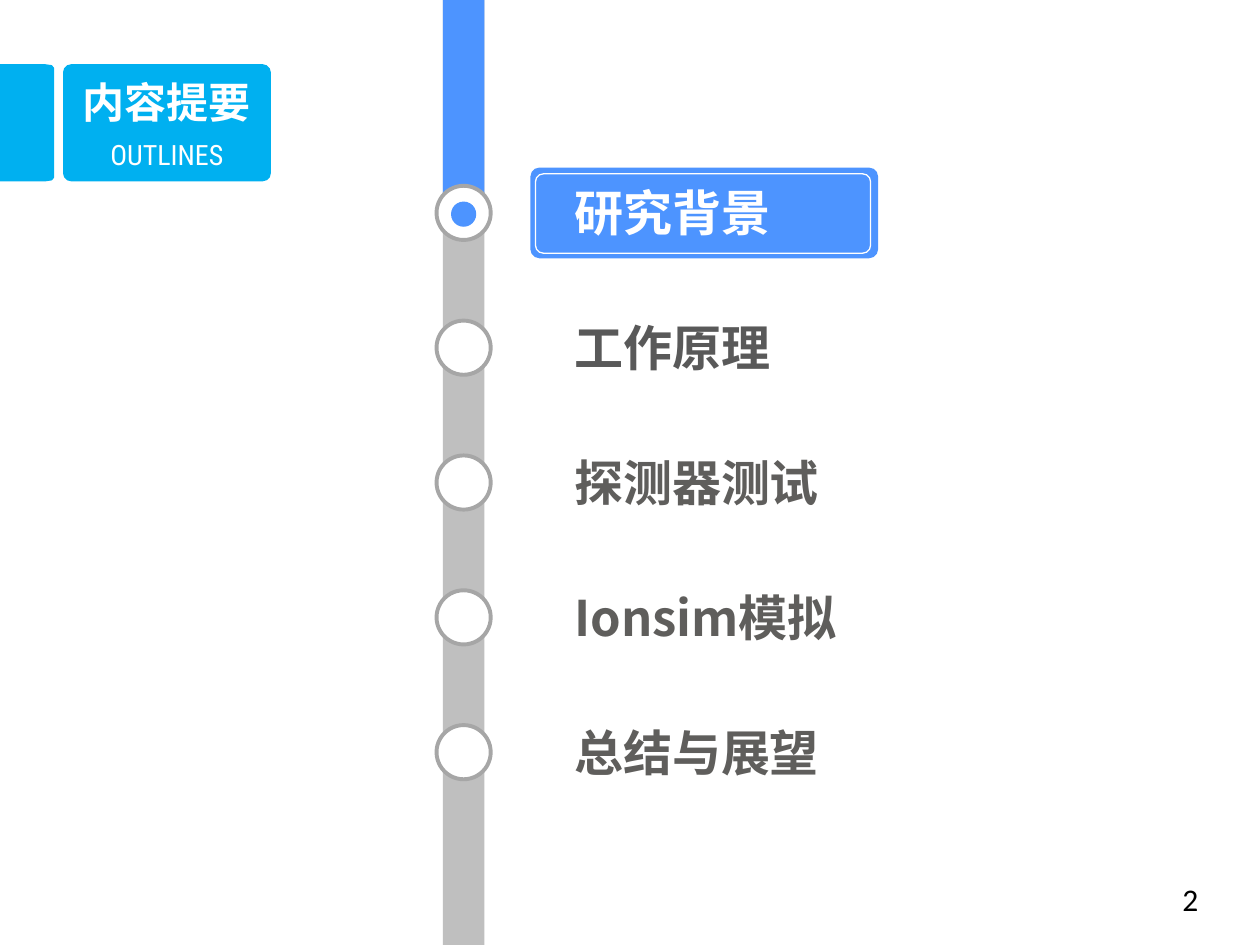
from pptx import Presentation
from pptx.dml.color import RGBColor
from pptx.enum.shapes import MSO_SHAPE
from pptx.enum.text import MSO_ANCHOR, MSO_AUTO_SIZE, PP_ALIGN
from pptx.oxml.ns import qn
from pptx.util import Inches, Pt
from lxml import etree

TITLE, SUBTITLE, PAGE_NUMBER = "内容提要", "OUTLINES", "2"
JP, SC = "Noto Sans CJK JP", "Noto Sans CJK SC"
WHITE = RGBColor(0xFF, 0xFF, 0xFF)
BLACK = RGBColor(0, 0, 0)
CYAN = RGBColor(0x00, 0xB0, 0xF0)
BLUE = RGBColor(0x4D, 0x94, 0xFF)
TRACK_GREY = RGBColor(0xBF, 0xBF, 0xBF)
RING_GREY = RGBColor(0xA6, 0xA6, 0xA6)
DARK = RGBColor(0x59, 0x59, 0x59)
WARM = RGBColor(0x5F, 0x5E, 0x5C)
TOPICS = [
    ("研究背景", JP, WHITE),
    ("工作原理", JP, DARK),
    ("探测器测试", SC, WARM),
    ("Ionsim模拟", SC, WARM),
    ("总结与展望", SC, WARM),
]
RECTANGLE, ROUNDED, OVAL = MSO_SHAPE.RECTANGLE, MSO_SHAPE.ROUNDED_RECTANGLE, MSO_SHAPE.OVAL
LEFT, CENTER, RIGHT = PP_ALIGN.LEFT, PP_ALIGN.CENTER, PP_ALIGN.RIGHT
MIDDLE, FIXED = MSO_ANCHOR.MIDDLE, MSO_AUTO_SIZE.NONE

WIDTH, HEIGHT = 10, 7.5
TRACK_CENTER, TRACK_WIDTH = 3.68, 0.33
FIRST_ROW, ROW_STEP = 1.69, 1.07
RING, DOT = 0.43, 0.2
TAB_TOP, TAB_WIDTH, TAB_HEIGHT = 0.51, 0.43, 0.93
CORNER_X, CORNER_Y = 0.07, 0.03
TITLE_LEFT, TITLE_WIDTH = 0.5, 1.65

deck = Presentation()
deck.slide_width, deck.slide_height = Inches(WIDTH), Inches(HEIGHT)
page = deck.slides.add_slide(deck.slide_layouts[5])


def paint(shape, fill=None, line=None, weight=0.75):
    """Set fill and outline, and drop the shadow."""
    shape.shadow.inherit = False
    if fill is None:
        shape.fill.background()
    else:
        shape.fill.solid()
        shape.fill.fore_color.rgb = fill
    if line is None:
        shape.line.fill.background()
    else:
        shape.line.color.rgb = line
        shape.line.width = Pt(weight)


def add_block(kind, left, top, width, height, corner=None, **style):
    """Add a painted preset shape."""
    shape = page.shapes.add_shape(kind, *map(Inches, (left, top, width, height)))
    if corner is not None:
        shape.adjustments[0] = corner
    paint(shape, **style)


def add_circle(center_y, size, **style):
    """Add a circle centred on the track."""
    add_block(OVAL, TRACK_CENTER - size / 2, center_y - size / 2, size, size, **style)


def write(text, left, top, width, height, size=28, font=SC, asian=SC,
          color=WHITE, bold=False, align=LEFT, box=None):
    """Write one line of text in a new or given box."""
    box = box or page.shapes.add_textbox(0, 0, 0, 0)
    box.left, box.top, box.width, box.height = map(Inches, (left, top, width, height))
    frame = box.text_frame
    frame.word_wrap, frame.auto_size, frame.vertical_anchor = True, FIXED, MIDDLE
    para = frame.paragraphs[0]
    para.alignment = align
    span = para.add_run()
    span.text = text
    span.font.size, span.font.name, span.font.bold = Pt(size), font, bold
    span.font.color.rgb = color
    etree.SubElement(span.font._element, qn("a:ea"), typeface=asian)


tab_bottom = TAB_TOP + TAB_HEIGHT
outline = [
    (0, TAB_TOP), (TAB_WIDTH - CORNER_X, TAB_TOP), (TAB_WIDTH - CORNER_X / 4, TAB_TOP + CORNER_Y / 4),
    (TAB_WIDTH, TAB_TOP + CORNER_Y), (TAB_WIDTH, tab_bottom - CORNER_Y),
    (TAB_WIDTH - CORNER_X / 4, tab_bottom - CORNER_Y / 4), (TAB_WIDTH - CORNER_X, tab_bottom), (0, tab_bottom),
]
points = [(Inches(x), Inches(y)) for x, y in outline]
builder = page.shapes.build_freeform(*points[0])
builder.add_line_segments(points[1:], close=True)
paint(builder.convert_to_shape(), fill=CYAN)

add_block(ROUNDED, TITLE_LEFT, TAB_TOP, TITLE_WIDTH, TAB_HEIGHT, corner=0.07, fill=CYAN)
write(SUBTITLE, TITLE_LEFT, 1.04, TITLE_WIDTH, 0.37, size=16, font="Roboto Condensed", align=CENTER)
title = page.shapes.title
write(TITLE, TITLE_LEFT, 0.56, TITLE_WIDTH, 0.5, size=24, font="Calibri", bold=True, align=CENTER, box=title)
page.shapes.element.append(title.element)

add_block(ROUNDED, 4.21, 1.33, 2.76, 0.72, corner=0.1, fill=BLUE)
add_block(ROUNDED, 4.25, 1.38, 2.66, 0.63, corner=0.1, line=WHITE)
track_left = TRACK_CENTER - TRACK_WIDTH / 2
add_block(RECTANGLE, track_left, 0, TRACK_WIDTH, HEIGHT, fill=TRACK_GREY)
add_block(RECTANGLE, track_left, 0, TRACK_WIDTH, 1.58, fill=BLUE)
for row, (topic, font, color) in enumerate(TOPICS):
    middle = FIRST_ROW + row * ROW_STEP
    add_circle(middle, RING, fill=WHITE, line=RING_GREY, weight=2.25)
    write(topic, 4.46, middle - 0.29, 2.6, 0.57, font=font, asian=font, color=color, bold=True)
add_circle(FIRST_ROW + 0.01, DOT, fill=BLUE)
write(PAGE_NUMBER, 8.74, 6.95, 0.87, 0.37, size=18, font="Calibri", color=BLACK, align=RIGHT)

deck.save("out.pptx")
